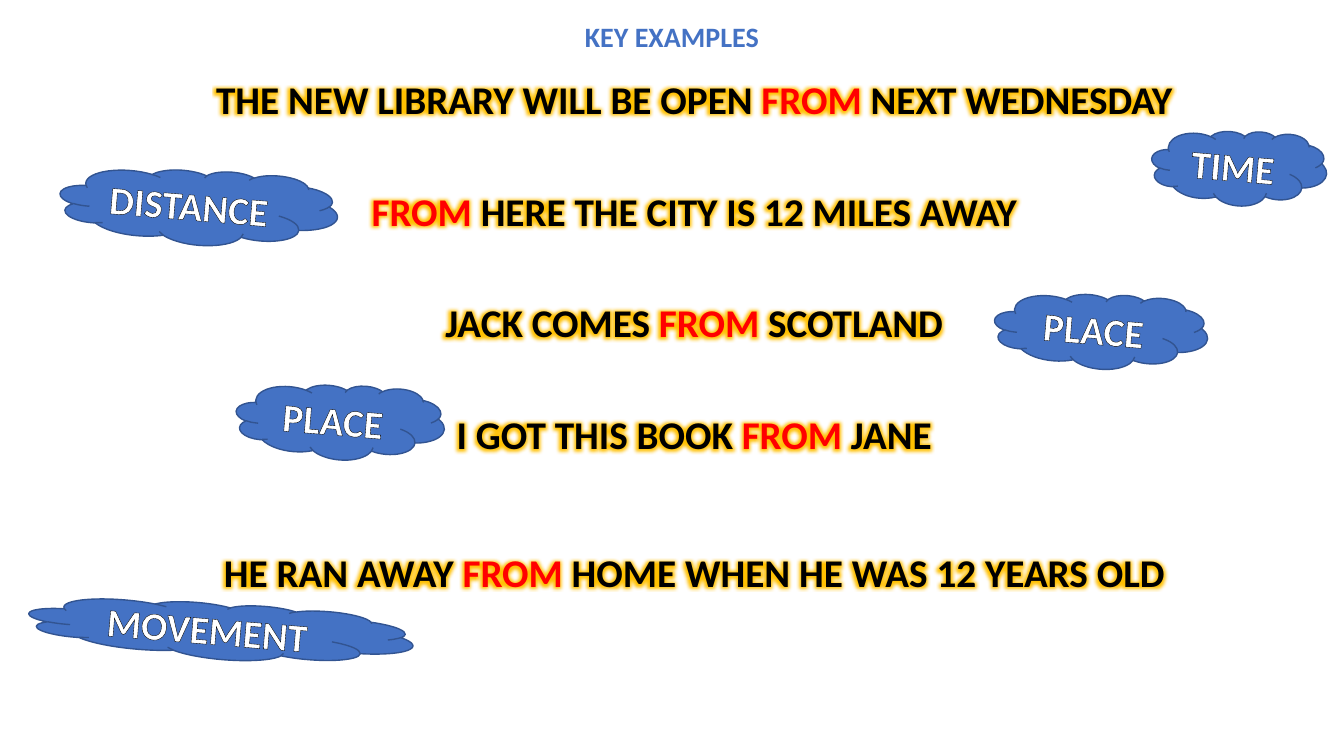
from lxml import etree
from pptx import Presentation
from pptx.dml.color import RGBColor
from pptx.enum.shapes import MSO_SHAPE
from pptx.enum.text import MSO_ANCHOR, PP_ALIGN
from pptx.util import Inches, Pt

CLOUD = MSO_SHAPE.CLOUD
MIDDLE = MSO_ANCHOR.MIDDLE
CENTER = PP_ALIGN.CENTER
NS = "http://schemas.openxmlformats.org/drawingml/2006/main"
HUES = {"blue": "4472C4", "edge": "325491", "white": "FFFFFF",
        "black": "000000", "red": "FF0000", "gold": "FFC000"}

deck = Presentation()
deck.slide_width, deck.slide_height = Inches(13.33), Inches(7.5)
COL, ROW = deck.slide_width / 100, deck.slide_height / 100
slide = deck.slides.add_slide(deck.slide_layouts[6])


def place(x, y, wide, high):
    """Turn grid columns and rows into slide lengths."""
    return [round(n) for n in (x * COL, y * ROW, wide * COL, high * ROW)]


def style(run, hue, size=28, line=False, glow=False):
    """Set bold Calibri, with an optional text outline and gold glow."""
    font = run.font
    font.name, font.size, font.bold = "Calibri", Pt(size), True
    font.color.rgb = RGBColor.from_string(HUES[hue])
    props = font._element
    if glow:
        props.insert(1, etree.fromstring(
            f'<a:effectLst xmlns:a="{NS}"><a:glow rad="{Pt(8)}">'
            f'<a:srgbClr val="{HUES["gold"]}"/></a:glow></a:effectLst>'))
    if line:
        props.insert(0, etree.fromstring(
            f'<a:ln xmlns:a="{NS}" w="{Pt(0.75)}"><a:solidFill>'
            f'<a:srgbClr val="{HUES["black"]}"/></a:solidFill></a:ln>'))


# Title
title = slide.shapes.add_textbox(*place(42.46, 1.87, 15.08, 5.87)).text_frame
title.text = "KEY EXAMPLES"
title.paragraphs[0].alignment = CENTER
style(title.paragraphs[0].runs[0], "blue", 20, line=True)

# Example sentences, each with the space before it in points
lines = [
    ("THE NEW LIBRARY WILL BE OPEN FROM NEXT WEDNESDAY", 0),
    ("FROM HERE THE CITY IS 12 MILES AWAY", 35.7),
    ("JACK COMES FROM SCOTLAND", 35.7),
    ("I GOT THIS BOOK FROM JANE", 35.7),
    ("HE RAN AWAY FROM HOME WHEN HE WAS 12 YEARS OLD", 54.7),
]
body = slide.shapes.add_textbox(*place(1.5, 8.93, 100.3, 71.3)).text_frame
body.word_wrap = True
for i, (text, gap) in enumerate(lines):
    para = body.add_paragraph() if i else body.paragraphs[0]
    para.alignment, para.line_spacing = CENTER, 1.07
    para.space_before, para.space_after = Pt(gap), Pt(8)
    for part in text.partition("FROM"):
        if part:
            run = para.add_run()
            run.text = part
            key = part == "FROM"
            style(run, "red" if key else "black", line=key, glow=True)

# Clouds naming each use of the word
clouds = [
    ("TIME", 85.67, 17.2, 13.05, 10),
    ("DISTANCE", 4.43, 22.4, 20.7, 10),
    ("PLACE", 73.97, 38.8, 15.9, 10),
    ("PLACE", 17.55, 50.8, 15.53, 10),
    ("MOVEMENT", 2.1, 79.73, 28.66, 7.47),
]
for word, *spot in clouds:
    cloud = slide.shapes.add_shape(CLOUD, *place(*spot))
    cloud.rotation = 4.7
    cloud.shadow.inherit = False
    cloud.fill.solid()
    cloud.fill.fore_color.rgb = RGBColor.from_string(HUES["blue"])
    cloud.line.color.rgb = RGBColor.from_string(HUES["edge"])
    cloud.line.width = Pt(1)
    frame = cloud.text_frame
    frame.text = word
    frame.word_wrap = False
    frame.vertical_anchor = MIDDLE
    frame.paragraphs[0].alignment = CENTER
    style(frame.paragraphs[0].runs[0], "white", line=True)

deck.save("out.pptx")
